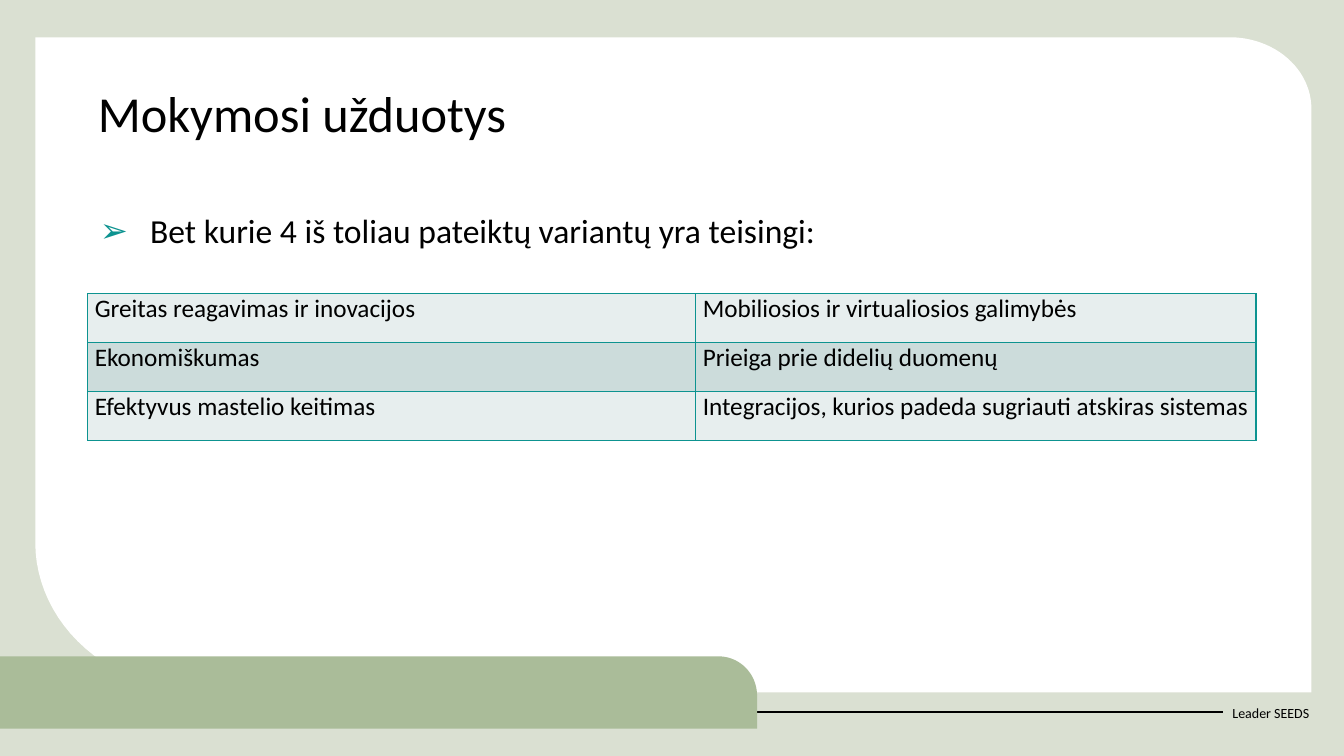
from dataclasses import dataclass
from math import cos, pi, sin

from lxml import etree
from pptx import Presentation
from pptx import util as u
from pptx.dml.color import RGBColor
from pptx.enum import shapes, text
from pptx.oxml import ns

FONT = "Calibri"
BLACK, TEAL = "000000", "0D9390"
STEPS = 24  # segments in each rounded corner


@dataclass
class Corner:
    """A panel corner, rounded when its radii are above zero (cm)."""
    x: float
    y: float
    rx: float = 0
    ry: float = 0
    start: float = 0  # angle in quarter turns, clockwise from the right


@dataclass
class Panel:
    color: str
    corners: list[Corner]


WHITE_PANEL = Panel("FFFFFF", [
    Corner(0.89, 0.94), Corner(33.05, 0.94, 2.06, 1.8, 3),
    Corner(33.05, 17.45), Corner(0.89, 17.45, 4.32, 3.78, 1)])
GREEN_TAB = Panel("AABC99", [
    Corner(0, 16.54), Corner(19.08, 16.54, 0.97, 0.99, 3),
    Corner(19.08, 18.36), Corner(0, 18.36)])

ANSWERS = [
    ("Greitas reagavimas ir inovacijos", "Mobiliosios ir virtualiosios galimybės"),
    ("Ekonomiškumas", "Prieiga prie didelių duomenų"),
    ("Efektyvus mastelio keitimas",
     "Integracijos, kurios padeda sugriauti atskiras sistemas"),
]
COLUMN_WIDTHS = (15.32, 14.12)
ROW_HEIGHT = 1.23
BANDS = ("E7EEEE", "CCDCDB")


def rgb(color: str) -> RGBColor:
    return RGBColor.from_string(color)


def paint(fill, color: str) -> None:
    fill.solid()
    fill.fore_color.rgb = rgb(color)


def corner_points(c: Corner) -> list[tuple[int, int]]:
    if not c.rx:
        return [(u.Cm(c.x), u.Cm(c.y))]
    # The arc centre lies inward from the corner
    side_x, side_y = (1, -1) if c.start == 3 else (-1, 1)
    cx, cy = c.x - side_x * c.rx, c.y - side_y * c.ry
    angles = [(c.start + i / STEPS) * pi / 2 for i in range(STEPS + 1)]
    return [(u.Cm(cx + c.rx * cos(a)), u.Cm(cy + c.ry * sin(a))) for a in angles]


def add_panel(s, panel: Panel) -> None:
    points = [pt for c in panel.corners for pt in corner_points(c)]
    builder = s.shapes.build_freeform(*points[0])
    builder.add_line_segments(points[1:], close=True)
    sp = builder.convert_to_shape()
    sp.shadow.inherit = False
    paint(sp.fill, panel.color)
    sp.line.fill.background()


def write(tf, content: str, size: float):
    p = tf.paragraphs[0]
    p.alignment = text.PP_ALIGN.LEFT
    r = p.add_run()
    r.text = content
    r.font.name, r.font.size = FONT, u.Pt(size)
    r.font.color.rgb = rgb(BLACK)
    return p


def fill_placeholder(sp, top: float, height: float, content: str, size: float):
    sp.left, sp.top, sp.width, sp.height = map(u.Cm, (2.21, top, 29.44, height))
    sp.element.getparent().append(sp.element)  # in front of the panels
    tf = sp.text_frame
    tf.word_wrap = True
    tf.auto_size = text.MSO_AUTO_SIZE.NONE
    tf.vertical_anchor = text.MSO_ANCHOR.TOP
    p = write(tf, content, size)
    p.line_spacing = 0.9
    p.space_before = u.Pt(0)
    return p


def add_bullet(p, char: str, color: str) -> None:
    pPr = p._p.get_or_add_pPr()
    pPr.set("marL", str(u.Cm(1.32)))
    pPr.set("indent", str(u.Cm(-1.27)))
    clr = etree.SubElement(pPr, ns.qn("a:buClr"))
    etree.SubElement(clr, ns.qn("a:srgbClr"), val=color)
    etree.SubElement(pPr, ns.qn("a:buFont"), typeface="Arial")
    etree.SubElement(pPr, ns.qn("a:buChar"), char=char)


def add_borders(cell, color: str) -> None:
    tcPr = cell._tc.get_or_add_tcPr()
    for i, side in enumerate(("lnL", "lnR", "lnT", "lnB")):
        ln = etree.Element(ns.qn(f"a:{side}"), w=str(u.Pt(1)))
        solid = etree.SubElement(ln, ns.qn("a:solidFill"))
        etree.SubElement(solid, ns.qn("a:srgbClr"), val=color)
        tcPr.insert(i, ln)


def add_answers(s) -> None:
    frame = s.shapes.add_table(
        len(ANSWERS), len(COLUMN_WIDTHS), u.Cm(2.21), u.Cm(7.4),
        u.Cm(sum(COLUMN_WIDTHS)), u.Cm(ROW_HEIGHT * len(ANSWERS)))
    table = frame.table
    table.first_row = False
    for column, width in zip(table.columns, COLUMN_WIDTHS):
        column.width = u.Cm(width)
    for i, answers in enumerate(ANSWERS):
        table.rows[i].height = u.Cm(ROW_HEIGHT)
        for j, answer in enumerate(answers):
            cell = table.cell(i, j)
            cell.margin_left = cell.margin_right = u.Cm(0.18)
            cell.margin_top = cell.margin_bottom = 0
            write(cell.text_frame, answer, 18)
            paint(cell.fill, BANDS[i % 2])
            add_borders(cell, TEAL)


def add_footer(s) -> None:
    sp = s.shapes.add_textbox(*map(u.Cm, (30.81, 17.45, 2.57, 1.02)))
    tf = sp.text_frame
    tf.word_wrap = True
    tf.vertical_anchor = text.MSO_ANCHOR.MIDDLE
    write(tf, "Leader SEEDS", 10)
    line = s.shapes.add_connector(
        shapes.MSO_CONNECTOR.STRAIGHT, *map(u.Cm, (0, 17.95, 30.81, 17.95)))
    line.line.color.rgb = rgb(BLACK)
    line.line.width = u.Pt(1.5)
    etree.SubElement(line.element.spPr, ns.qn("a:effectLst"))


def main() -> None:
    prs = Presentation()
    prs.slide_width, prs.slide_height = u.Cm(33.87), u.Cm(19.05)
    s = prs.slides.add_slide(prs.slide_layouts[1])

    # Background, panels and footer
    paint(s.background.fill, "DAE0D2")
    add_panel(s, WHITE_PANEL)
    add_footer(s)
    add_panel(s, GREEN_TAB)

    # Title, question and answers
    fill_placeholder(s.shapes.title, 2.11, 2.24, "Mokymosi užduotys", 36)
    p = fill_placeholder(s.placeholders[1], 5.28, 11.1,
                         "Bet kurie 4 iš toliau pateiktų variantų yra teisingi:", 24)
    add_bullet(p, "➢", TEAL)
    add_answers(s)

    prs.save("out.pptx")


if __name__ == "__main__":
    main()
